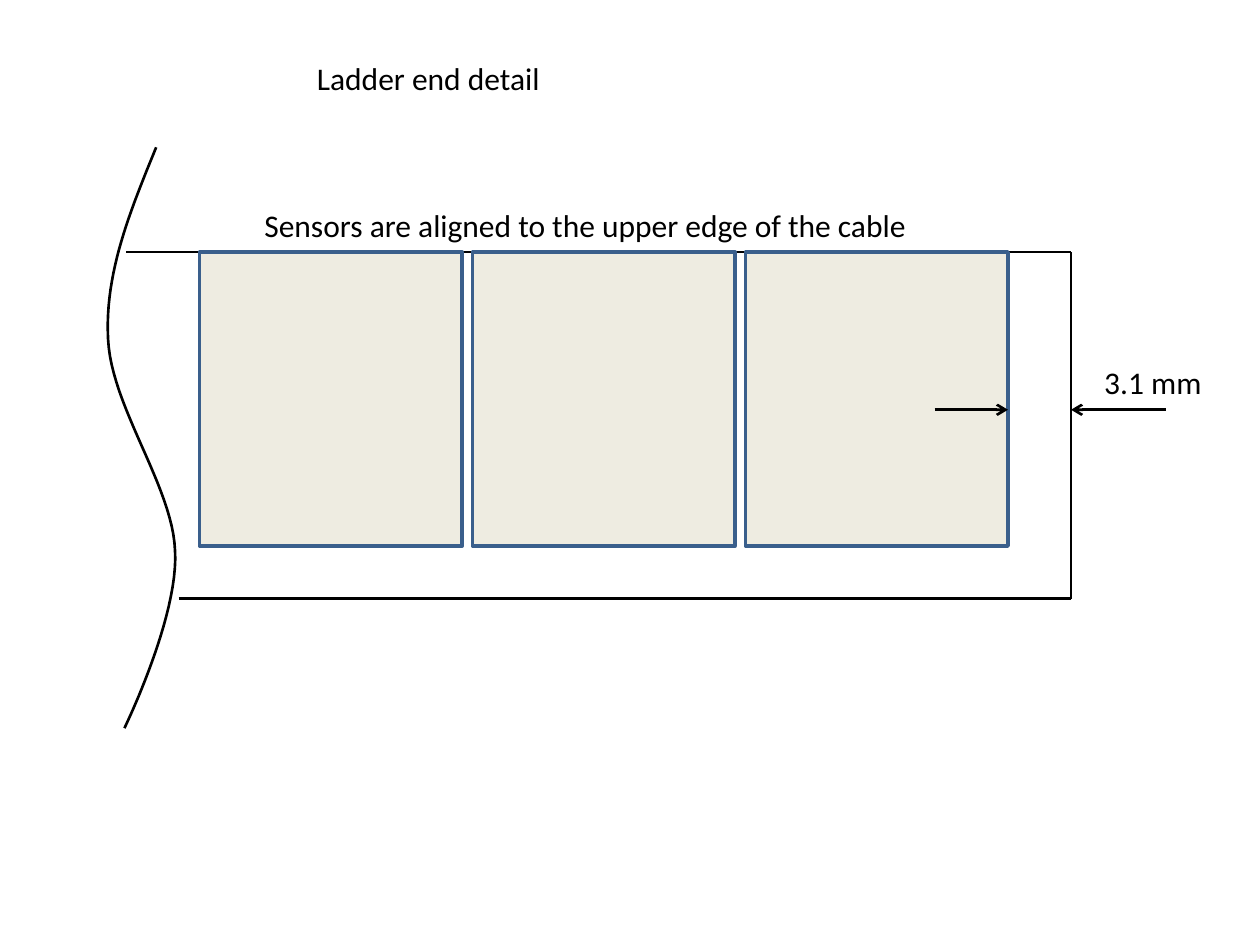
import pptx
import pptx.dml.color
import pptx.enum.shapes
import pptx.enum.text
import pptx.oxml
import pptx.oxml.ns
import pptx.util
from pptx.util import Cm

COLORS = {"ink": "000000", "sensor": "EEECE1", "sensor_edge": "3A5F8C"}
FONT = "Calibri"

# Cubic curve of the cable break: a start, then two controls and an end per piece.
BREAK_START = (1.05, 0)
BREAK_PIECES = [
    ((0.54, 1.25), (0.01, 2.52), (0.08, 3.86)),
    ((0.14, 5.23), (1.38, 6.83), (1.43, 8.13)),
    ((1.51, 9.45), (0.41, 11.71), (0.41, 11.71)),
]
CURVE_STEPS = 24


def rgb(name):
    return pptx.dml.color.RGBColor.from_string(COLORS[name])


def set_line(sp, color, width):
    sp.line.color.rgb = rgb(color)
    sp.line.width = pptx.util.Pt(width)


def add_line(slide, x1, y1, x2, y2, arrow=False):
    s = slide.shapes.add_connector(
        pptx.enum.shapes.MSO_CONNECTOR.STRAIGHT, Cm(x1), Cm(y1), Cm(x2), Cm(y2))
    set_line(s, "ink", 1.5)
    if arrow:
        tail = pptx.oxml.parse_xml(
            f'<a:tailEnd {pptx.oxml.ns.nsdecls("a")} type="arrow"/>')
        s.line._get_or_add_ln().append(tail)
    s._element.spPr.append(
        pptx.oxml.parse_xml(f'<a:effectLst {pptx.oxml.ns.nsdecls("a")}/>'))


def add_label(slide, text, left, top, width, height=1.03):
    s = slide.shapes.add_textbox(Cm(left), Cm(top), Cm(width), Cm(height))
    tf = s.text_frame
    tf.word_wrap = False
    tf.auto_size = pptx.enum.text.MSO_AUTO_SIZE.SHAPE_TO_FIT_TEXT
    p = tf.paragraphs[0]
    p.text = text
    p.font.name = FONT
    p.font.size = pptx.util.Pt(18)
    p.font.color.rgb = rgb("ink")


def bezier(a, b, c, d, t):
    u = 1 - t
    return tuple(u**3 * i + 3 * u * u * t * j + 3 * u * t * t * k + t**3 * m
                 for i, j, k, m in zip(a, b, c, d))


def add_break(slide, left, top):
    """Draw the wavy line where the cable is cut off."""
    points = [BREAK_START]
    for piece in BREAK_PIECES:
        start = points[-1]
        points += [bezier(start, *piece, n / CURVE_STEPS)
                   for n in range(1, CURVE_STEPS + 1)]
    points = [(Cm(left + x), Cm(top + y)) for x, y in points]
    builder = slide.shapes.build_freeform(*points[0])
    builder.add_line_segments(points[1:], close=False)
    sp = builder.convert_to_shape()
    sp.shadow.inherit = False
    sp.fill.background()
    set_line(sp, "ink", 1.5)


def add_cable(slide, left, top, width, height):
    """Draw the three visible edges; the lower one starts at the break."""
    right, bottom = left + width, top + height
    add_line(slide, left, top, right, top)
    add_line(slide, right, bottom, right, top)
    add_line(slide, left + 1.06, bottom, right, bottom)


def add_sensors(slide, left, top, width, height, count=3, gap=0.21):
    sensor_width = (width - gap * (count - 1)) / count
    for n in range(count):
        sp = slide.shapes.add_shape(
            pptx.enum.shapes.MSO_SHAPE.RECTANGLE,
            Cm(left + n * (sensor_width + gap)), Cm(top),
            Cm(sensor_width), Cm(height))
        sp.shadow.inherit = False
        sp.fill.solid()
        sp.fill.fore_color.rgb = rgb("sensor")
        set_line(sp, "sensor_edge", 2)


def add_gap_dimension(slide, left, top, width, text):
    """Point two arrows at the sides of a gap and label its size."""
    right = left + width
    add_line(slide, left - 1.48, top, left, top, arrow=True)
    add_line(slide, right + 1.91, top, right, top, arrow=True)
    add_label(slide, text, right + 0.42, top - 1.06, 2.48)


def build_ladder_end(slide, left, top, width, height):
    right = left + width
    sensor_left, end_gap = left + 1.48, 1.27
    add_break(slide, left - 0.44, top - 2.11)
    add_cable(slide, left, top, width, height)
    add_sensors(slide, sensor_left, top, right - end_gap - sensor_left, 5.93)
    add_gap_dimension(slide, right - end_gap, top + 3.18, end_gap, "3.1 mm")
    add_label(slide, "Sensors are aligned to the upper edge of the cable",
              left + 2.54, top - 1.06, 13.62)


def main():
    prs = pptx.Presentation()
    prs.slide_width, prs.slide_height = Cm(25.4), Cm(19.05)
    slide = prs.slides.add_slide(prs.slide_layouts[6])
    add_label(slide, "Ladder end detail", 6.14, 1.06, 5.06)
    build_ladder_end(slide, 2.54, 5.08, 19.05, 6.99)
    prs.save("out.pptx")


if __name__ == "__main__":
    main()
